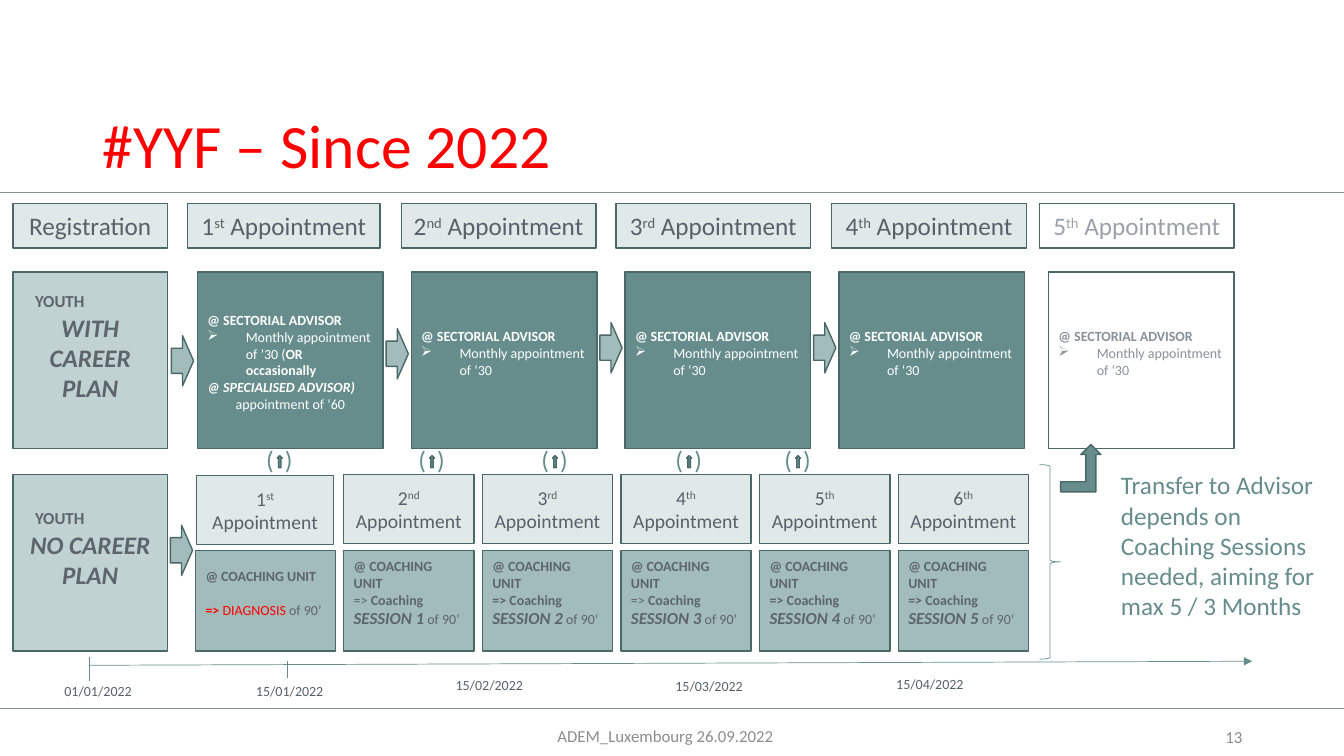
from collections import namedtuple
from dataclasses import dataclass

from lxml import etree
from pptx import Presentation
from pptx.dml.color import RGBColor
from pptx.enum.shapes import MSO_CONNECTOR, MSO_SHAPE
from pptx.enum.text import MSO_ANCHOR, MSO_AUTO_SIZE, PP_ALIGN
from pptx.oxml.ns import qn
from pptx.util import Inches, Pt

LEFT, CENTER, RIGHT = PP_ALIGN.LEFT, PP_ALIGN.CENTER, PP_ALIGN.RIGHT
TOP, MIDDLE, BOTTOM = MSO_ANCHOR.TOP, MSO_ANCHOR.MIDDLE, MSO_ANCHOR.BOTTOM
PROCESS = MSO_SHAPE.FLOWCHART_PROCESS
RIGHT_ARROW, UP_ARROW = MSO_SHAPE.RIGHT_ARROW, MSO_SHAPE.UP_ARROW
BENT_ARROW, BRACE = MSO_SHAPE.BENT_UP_ARROW, MSO_SHAPE.RIGHT_BRACE
STRAIGHT = MSO_CONNECTOR.STRAIGHT

Box = namedtuple("Box", "x y w h")


@dataclass(frozen=True)
class Theme:
    font: str = "Calibri"
    red: str = "FF0000"
    white: str = "FFFFFF"
    teal: str = "668D8C"
    edge: str = "4B6868"
    mid: str = "A2BCBB"
    light: str = "C1D2D2"
    pale: str = "E0E9E8"
    ink: str = "586169"
    body: str = "5E646B"
    grey: str = "87919A"
    faded: str = "9CA2A8"
    footer: str = "8C8C8C"
    title: int = 44
    large: int = 18
    medium: int = 14
    label: int = 12
    small: int = 10


T = Theme()


def add_run(p, text, size=T.small, color=T.ink, bold=False, italic=False, sup=False, spacing=0):
    r = p.add_run()
    r.text = text
    r.font.name, r.font.size = T.font, Pt(size)
    r.font.color.rgb = RGBColor.from_string(color)
    r.font.bold, r.font.italic = bold, italic
    if sup:
        r.font._element.set("baseline", "30000")
    if spacing:
        r.font._element.set("spc", str(spacing))


def start_paragraph(tf, align=LEFT, before=0, indent=0, bullet=None):
    """Use the empty first paragraph, or add a new one."""
    p = tf.paragraphs[0]
    if p.runs:
        p = tf.add_paragraph()
    p.alignment = align
    if before:
        p.space_before = Pt(before)
    if indent:
        pPr = p._p.get_or_add_pPr()
        pPr.set("marL", str(Inches(indent)))
        if bullet:
            pPr.set("indent", str(-Inches(indent)))
            etree.SubElement(pPr, qn("a:buChar")).set("char", bullet)
    return p


def add_shape(slide, kind, box, fill=None, line=T.edge, width=1, anchor=MIDDLE, top=0.05):
    sp = slide.shapes.add_shape(kind, *map(Inches, box))
    sp.shadow.inherit = False
    if fill:
        sp.fill.solid()
        sp.fill.fore_color.rgb = RGBColor.from_string(fill)
    else:
        sp.fill.background()
    sp.line.color.rgb = RGBColor.from_string(line)
    sp.line.width = Pt(width)
    tf = sp.text_frame
    tf.word_wrap, tf.vertical_anchor, tf.margin_top = True, anchor, Inches(top)
    return tf


def add_label(slide, box, text, align=LEFT, anchor=TOP, **fmt):
    tf = slide.shapes.add_textbox(*map(Inches, box)).text_frame
    tf.word_wrap, tf.vertical_anchor = True, anchor
    add_run(start_paragraph(tf, align), text, **fmt)


def add_line(slide, x1, y1, x2, y2, color=T.teal, arrow=False):
    c = slide.shapes.add_connector(STRAIGHT, *map(Inches, (x1, y1, x2, y2)))
    c.line.color.rgb = RGBColor.from_string(color)
    c.line.width = Pt(0.5)
    if arrow:
        etree.SubElement(c.line._get_or_add_ln(), qn("a:tailEnd")).set("type", "triangle")
    etree.SubElement(c._element.spPr, qn("a:effectLst"))


def appointment(slide, box, number, suffix, size, fill=T.pale, color=T.ink):
    p = start_paragraph(add_shape(slide, PROCESS, box, fill), CENTER)
    add_run(p, number, size, color)
    add_run(p, suffix, size, color, sup=True)
    add_run(p, " Appointment", size, color)


def youth_card(slide, box, plan, top):
    tf = add_shape(slide, PROCESS, box, T.light, anchor=TOP, top=top)
    add_run(start_paragraph(tf, indent=0.12), "YOUTH", T.label, T.body, bold=True)
    add_run(start_paragraph(tf, CENTER, before=1), plan, T.large, T.body, bold=True, italic=True)


def advisor_card(slide, box, fill=T.teal, color=T.white, specialised=False):
    tf = add_shape(slide, PROCESS, box, fill, anchor=TOP, top=0.39 if specialised else 0.55)
    add_run(start_paragraph(tf), "@ SECTORIAL ADVISOR", color=color, bold=True)
    p = start_paragraph(tf, indent=0.38, bullet="➢")
    if not specialised:
        add_run(p, "Monthly appointment of ‘30", color=color)
        return
    add_run(p, "Monthly appointment of ’30 (", color=color)
    add_run(p, "OR occasionally", color=color, bold=True)
    add_run(start_paragraph(tf), "@ SPECIALISED ADVISOR)", color=color, bold=True, italic=True)
    add_run(start_paragraph(tf, CENTER), "appointment of ‘60", color=color)


def diagnosis_card(slide, box):
    tf = add_shape(slide, PROCESS, box, T.mid, anchor=TOP, top=0.17)
    add_run(start_paragraph(tf), "@ COACHING UNIT", color=T.body, bold=True)
    p = start_paragraph(tf, before=12)
    add_run(p, "=> ", color=T.red, bold=True)
    add_run(p, "DIAGNOSIS ", color=T.red)
    add_run(p, "of 90’", color=T.body)


def session_card(slide, box, number):
    tf = add_shape(slide, PROCESS, box, T.mid, anchor=TOP, top=0.07)
    add_run(start_paragraph(tf), "@ COACHING UNIT", color=T.body, bold=True)
    p = start_paragraph(tf)
    add_run(p, "=> ", color=T.body, bold=number not in (1, 3))
    add_run(p, "Coaching ", color=T.body, bold=True)
    add_run(p, f"SESSION {number}", T.label, T.body, bold=True, italic=True)
    add_run(p, " of 90’", color=T.body)


def header_row(slide, box):
    tf = add_shape(slide, PROCESS, Box(box.x, box.y, 1.53, box.h), T.pale)
    add_run(start_paragraph(tf, CENTER), "Registration", T.large)
    columns = [(1.86, "st"), (3.98, "nd"), (6.11, "rd"), (8.25, "th"), (10.31, "th")]
    for i, (x, suffix) in enumerate(columns, 1):
        cell = Box(x, box.y, 1.91 if i == 1 else 1.93, box.h)
        fill, color = (None, T.faded) if i == 5 else (T.pale, T.ink)
        appointment(slide, cell, str(i), suffix, T.large, fill, color)


def career_plan_row(slide, box):
    youth_card(slide, Box(box.x, box.y, 1.53, box.h), "WITH CAREER PLAN", 0.18)
    for i in range(4):
        x = box.x + 1.83 + 2.12 * i
        advisor_card(slide, Box(x, box.y, 1.84, box.h), specialised=i == 0)
    advisor_card(slide, Box(box.x + 10.27, box.y, 1.84, box.h), None, T.grey)
    for x, dy in ((1.7, 0.63), (3.83, 0.56), (5.95, 0.5), (8.07, 0.5)):
        add_shape(slide, RIGHT_ARROW, Box(x, box.y + dy, 0.22, 0.5), T.mid)


def coaching_row(slide, box):
    youth_card(slide, Box(box.x, box.y, 1.53, box.h), "NO CAREER PLAN", 0.33)
    add_shape(slide, RIGHT_ARROW, Box(box.x + 1.56, box.y + 0.5, 0.22, 0.5), T.mid)
    appointment(slide, Box(box.x + 1.82, box.y + 0.01, 1.36, 0.68), "1", "st", T.medium)
    diagnosis_card(slide, Box(box.x + 1.81, box.y + 0.75, 1.39, 1))
    for i, suffix in enumerate(("nd", "rd", "th", "th", "th")):
        x = box.x + 3.28 + 5.5 / 4 * i
        appointment(slide, Box(x, box.y, 1.29, 0.68), str(i + 2), suffix, T.medium)
        session_card(slide, Box(x, box.y + 0.75, 1.29, 1), i + 1)
    # Optional moves up to the advisor
    for x in (2.54, 4.05, 5.27, 6.6, 7.68):
        add_label(slide, Box(x, box.y - 0.35, 0.65, 0.4), "( )",
                  size=T.large, color=T.teal, spacing=200)
        add_shape(slide, UP_ARROW, Box(x + 0.21, box.y - 0.19, 0.05, 0.12), T.teal)


def transfer_note(slide, box):
    add_shape(slide, BRACE, Box(box.x, box.y, 0.21, box.h), line=T.teal, width=0.5)
    add_shape(slide, BENT_ARROW, Box(box.x + 0.21, box.y - 0.2, 0.4, 0.47), T.teal)
    add_label(slide, Box(box.x + 0.71, box.y, 2.2, 1.62),
              "Transfer to Advisor depends on Coaching Sessions needed, aiming for max 5 / 3 Months",
              size=T.large, color=T.teal)


def timeline(slide, box):
    add_line(slide, box.x, box.y + 0.08, box.x + box.w, box.y + 0.04, arrow=True)
    add_line(slide, box.x, box.y, box.x, box.y + 0.24)
    add_line(slide, box.x + 1.96, box.y + 0.04, box.x + 1.96, box.y + 0.21)
    dates = [(0.54, 0.2, "01/01/2022"), (2.44, 0.2, "15/01/2022"), (4.42, 0.14, "15/02/2022"),
             (6.6, 0.15, "15/03/2022"), (8.79, 0.13, "15/04/2022")]
    for x, dy, date in dates:
        add_label(slide, Box(x, box.y + dy, 0.89, 0.27), date)


def frame(slide, box):
    for y in (1.91, 7.03):
        add_line(slide, box.x, y, box.x + box.w, y, T.grey)
    title = slide.shapes.title
    title.left, title.top, title.width, title.height = map(Inches, (0.92, 0.4, 10.77, 1.45))
    tf = title.text_frame
    tf.auto_size, tf.vertical_anchor = MSO_AUTO_SIZE.NONE, BOTTOM
    p = start_paragraph(tf)
    p.line_spacing = 0.9
    add_run(p, "#YYF – Since 2022", T.title, T.red)
    add_label(slide, Box(4.35, 7.1, 4.5, 0.4), "ADEM_Luxembourg 26.09.2022", CENTER, MIDDLE,
              size=T.label, color=T.footer)
    add_label(slide, Box(9.42, 7.11, 3, 0.4), "13", RIGHT, MIDDLE, size=T.label, color=T.footer)


def main():
    prs = Presentation()
    prs.slide_width, prs.slide_height = Inches(13.33), Inches(7.5)
    slide = prs.slides.add_slide(prs.slide_layouts[5])
    frame(slide, Box(0, 0, 13.33, 7.5))
    header_row(slide, Box(0.13, 2.02, 12.11, 0.44))
    career_plan_row(slide, Box(0.13, 2.7, 12.11, 1.75))
    coaching_row(slide, Box(0.13, 4.71, 10.07, 1.75))
    transfer_note(slide, Box(10.31, 4.61, 2.91, 1.93))
    timeline(slide, Box(0.89, 6.52, 11.53, 0.47))
    prs.save("out.pptx")


if __name__ == "__main__":
    main()
